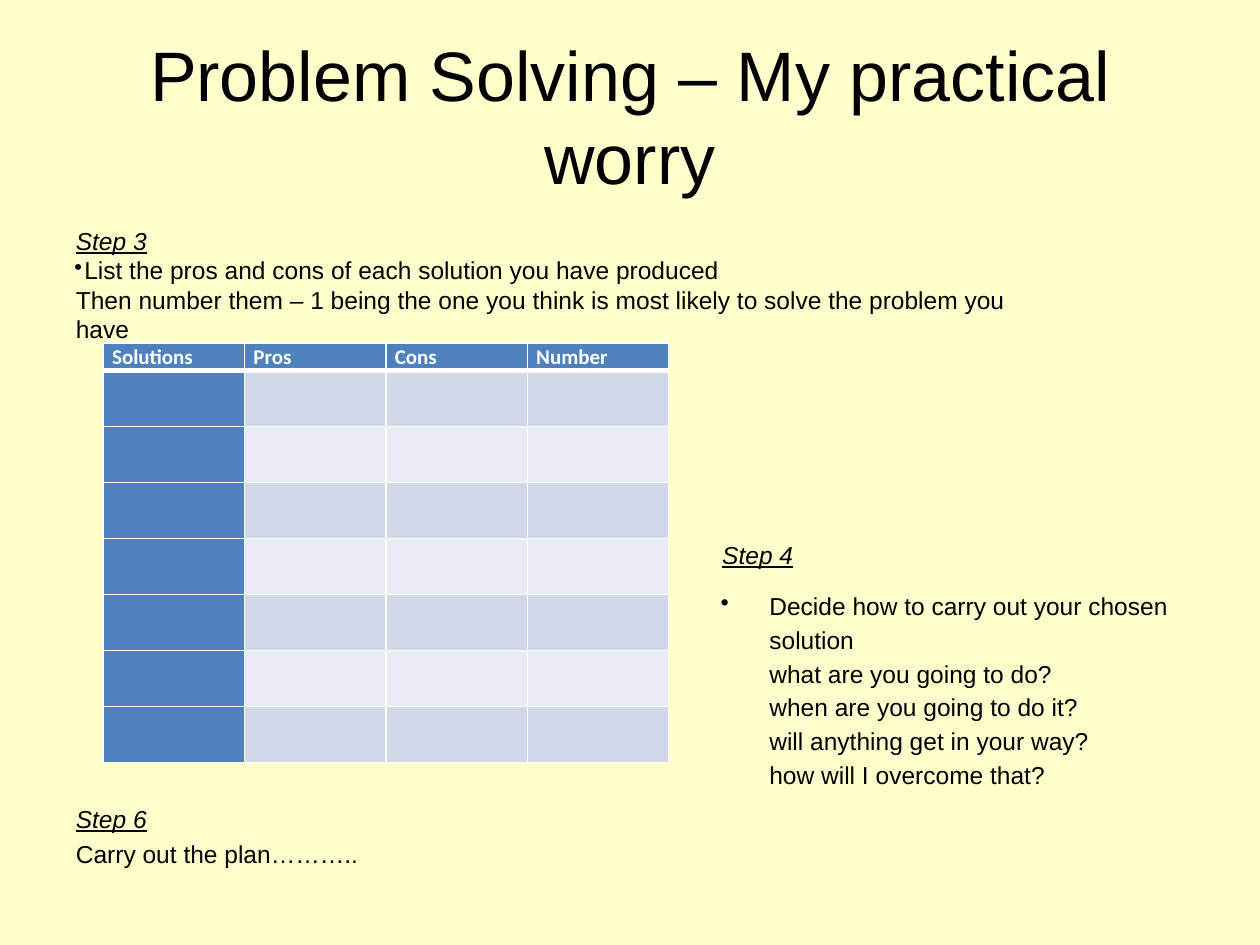
from lxml import etree
from pptx import Presentation
from pptx.dml.color import RGBColor
from pptx.enum import text
from pptx.oxml import ns
from pptx.util import Cm, Pt

COLORS = {"background": "FFFFCC", "text": "000000", "white": "FFFFFF",
          "header": "4F81BC", "odd": "D0D7E8", "even": "E9ECF4"}


def color(name):
    return RGBColor.from_string(COLORS[name])


def format_font(font, size, name="Arial", fill="text"):
    font.size, font.name = Pt(size), name
    font.color.rgb = color(fill)


def set_margins(tf, top):
    tf.margin_left = tf.margin_right = tf.margin_bottom = 0
    tf.margin_top = Cm(top)


def set_indent(p, left, bullet_size=None):
    """Indent a paragraph; with a bullet size (percent), hang a bullet."""
    pPr = p._p.get_or_add_pPr()
    pPr.set("marL", str(Cm(left)))
    if bullet_size:
        pPr.set("indent", str(-Cm(left)))
        etree.SubElement(pPr, ns.qn("a:buSzPct")).set("val", str(bullet_size * 1000))
        etree.SubElement(pPr, ns.qn("a:buChar")).set("char", "•")


def set_border(cell, side, width):
    ln = etree.SubElement(cell._tc.get_or_add_tcPr(), ns.qn(f"a:ln{side}"), w=str(Pt(width)))
    fill = etree.SubElement(ln, ns.qn("a:solidFill"))
    etree.SubElement(fill, ns.qn("a:srgbClr")).set("val", COLORS["white"])


def add_title(s, title, left, top, width, height):
    sp = s.shapes.title
    sp.left, sp.top, sp.width, sp.height = Cm(left), Cm(top), Cm(width), Cm(height)
    tf = sp.text_frame
    tf.text = title
    tf.auto_size = text.MSO_AUTO_SIZE.NONE
    tf.vertical_anchor = text.MSO_ANCHOR.TOP
    set_margins(tf, 0.1)
    p = tf.paragraphs[0]
    p.alignment = text.PP_ALIGN.CENTER
    p.line_spacing, p.space_before = Pt(47), Pt(3)
    format_font(p.runs[0].font, 40)


def add_step(s, heading, lines, left, top, width, height, margin=0.03, heading_space=1):
    """Lines are (wording, space before, left indent, bullet size, line spacing)."""
    sp = s.shapes.add_textbox(Cm(left), Cm(top), Cm(width), Cm(height))
    tf = sp.text_frame
    tf.word_wrap = True
    set_margins(tf, margin)
    rows = [(heading, heading_space, 0.03, None, 1)] + lines
    for i, (wording, before, indent, bullet_size, spacing) in enumerate(rows):
        p = tf.add_paragraph() if i else tf.paragraphs[0]
        p.text = wording
        p.space_before, p.line_spacing = Pt(before), spacing
        set_indent(p, indent, bullet_size)
        font = p.runs[0].font
        format_font(font, 14)
        font.italic = font.underline = i == 0


def add_solutions_table(s, headers, blank_rows, left, top, col_width, header_height, row_height):
    cols, rows = len(headers), blank_rows + 1
    table = s.shapes.add_table(rows, cols, Cm(left), Cm(top), Cm(col_width * cols),
                               Cm(header_height + row_height * blank_rows)).table
    for col in table.columns:
        col.width = Cm(col_width)
    for r, row in enumerate(table.rows):
        row.height = Cm(row_height if r else header_height)
        for c, cell in enumerate(row.cells):
            set_margins(cell, 0.03)
            # White grid, heavier below the header
            for side in "LRTB":
                heavy = (r, side) in ((0, "B"), (1, "T"))
                set_border(cell, side, 3 if heavy else 1)
            band = "odd" if r % 2 else "even"
            cell.fill.solid()
            cell.fill.fore_color.rgb = color("header" if r == 0 or c == 0 else band)
            if r == 0:
                cell.text = headers[c]
                p = cell.text_frame.paragraphs[0]
                p.space_before = Pt(0.5)
                set_indent(p, 0.18)
                format_font(p.runs[0].font, 12, "Calibri", "white")
                p.runs[0].font.bold = True


def main():
    prs = Presentation()
    prs.slide_width, prs.slide_height = Cm(25.4), Cm(19.05)
    s = prs.slides.add_slide(prs.slide_layouts[5])
    s.background.fill.solid()
    s.background.fill.fore_color.rgb = color("background")

    add_title(s, "Problem Solving – My practical worry", 2.11, 0.58, 21.18, 3.45)

    # Steps 3 and 6 share the left margin
    left = 1.5
    add_step(s, "Step 3", [
        ("List the pros and cons of each solution you have produced", 0.1, 0.2, 93, 1),
        ("Then number them – 1 being the one you think is most likely to solve "
         "the problem you have", 0, 0.03, None, 1),
    ], left, 4.52, 19.91, 1.85)
    add_step(s, "Step 6", [("Carry out the plan………..", 3.4, 0.03, None, 1)],
             left, 16.05, 5.74, 1.5, margin=0.15, heading_space=4.3)

    add_solutions_table(s, ["Solutions", "Pros", "Cons", "Number"], 7,
                        2.08, 6.91, 2.85, 0.56, 1.13)

    # Step 4, to the right of the table
    questions = ["what are you going to do?", "when are you going to do it?",
                 "will anything get in your way?", "how will I overcome that?"]
    add_step(s, "Step 4", [
        ("Decide how to carry out your chosen", 12.5, 0.98, 100, 1),
        ("solution", 2.5, 0.98, None, 1),
        *[(question, 0, 0.98, None, 1.15) for question in questions],
    ], 14.53, 10.85, 9.2, 5.11)

    prs.save("out.pptx")


if __name__ == "__main__":
    main()
